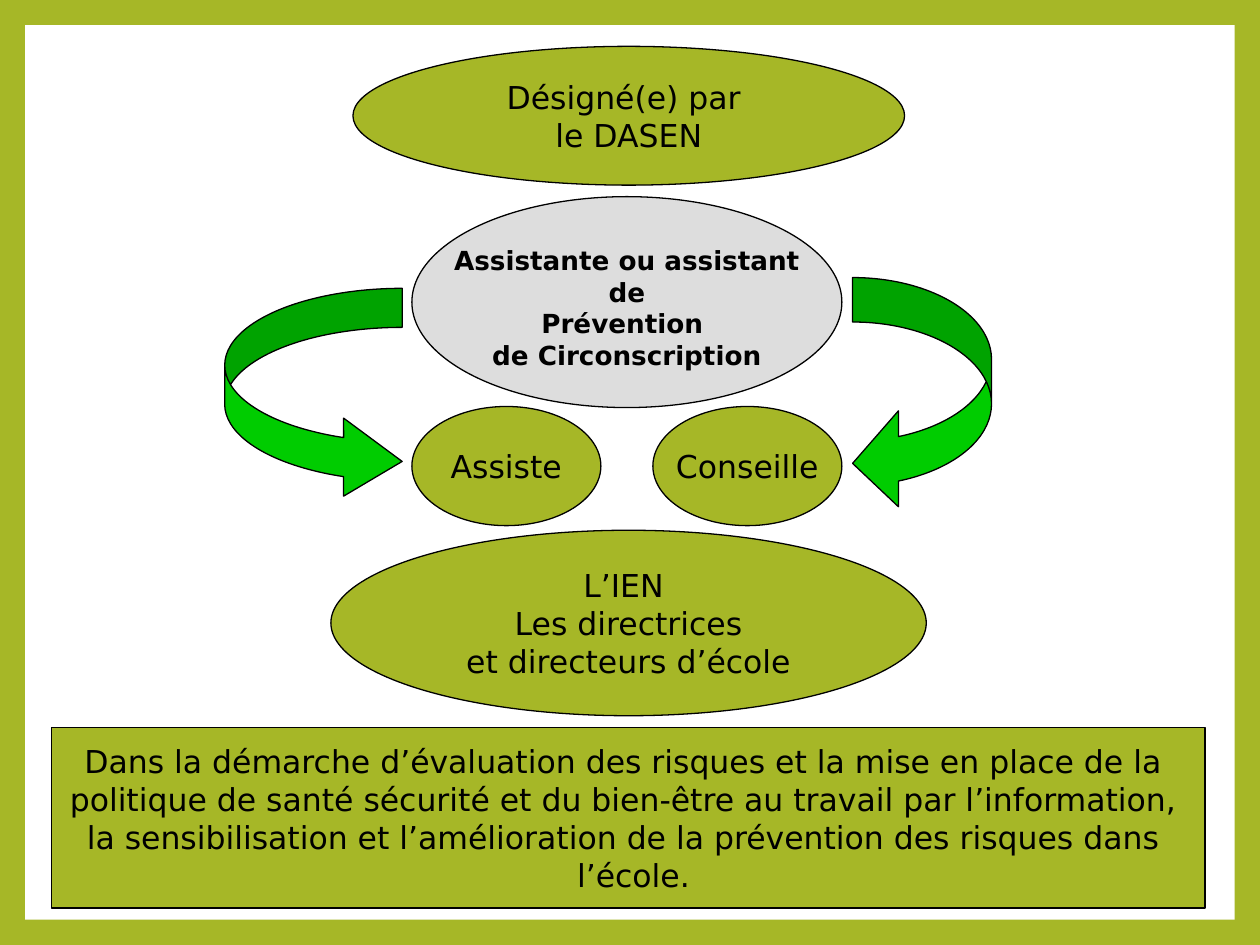
from dataclasses import dataclass

from pptx import Presentation
from pptx.dml.color import RGBColor
from pptx.enum.shapes import MSO_SHAPE as Preset
from pptx.enum.text import MSO_ANCHOR as Anchor, PP_ALIGN as Align
from pptx.shapes.autoshape import Shape
from pptx.slide import Slide
from pptx.util import Pt

OLIVE = RGBColor(0xA6, 0xB7, 0x27)
GREY = RGBColor(0xDD, 0xDD, 0xDD)
GREEN = RGBColor(0x00, 0xCC, 0x00)
WHITE = RGBColor(0xFF, 0xFF, 0xFF)
BLACK = RGBColor(0x00, 0x00, 0x00)
FONT = "DejaVu Sans"
SLIDE_WIDTH, SLIDE_HEIGHT, BORDER = 720, 540, 14.4


@dataclass(frozen=True)
class Box:
    left: float
    top: float
    width: float
    height: float


@dataclass(frozen=True)
class Label:
    box: Box
    text: str
    preset: Preset = Preset.OVAL
    fill: RGBColor = OLIVE
    size: float = 18
    bold: bool = False
    top_inset: float = 3.6


@dataclass(frozen=True)
class Arrow:
    box: Box
    preset: Preset
    adjustments: tuple[float, float, float]


ASSISTANT = Label(
    Box(235.4, 112.4, 245.7, 120.5),
    "Assistante ou assistant\vde\nPrévention \nde Circonscription",
    fill=GREY, size=15, bold=True, top_inset=9.6,
)
ARROWS = [
    Arrow(Box(128.4, 164.8, 101.4, 121.2), Preset.CURVED_RIGHT_ARROW, (0.22, 0.44, 0.33)),
    Arrow(Box(487.2, 158.6, 79.4, 133.6), Preset.CURVED_LEFT_ARROW, (0.32, 0.69, 0.33)),
]
LABELS = [
    Label(Box(235.4, 232.3, 108, 68.1), "Assiste"),
    Label(Box(373.1, 232.3, 108, 68.1), "Conseille"),
    Label(
        Box(29.6, 415.9, 659.1, 103),
        "Dans la démarche d’évaluation des risques et la mise en place de la \n"
        "politique de santé sécurité et du bien-être au travail par l’information, \n"
        "la sensibilisation et l’amélioration de la prévention des risques dans \n"
        " l’école.",
        preset=Preset.RECTANGLE,
    ),
    Label(Box(201.7, 26.5, 315.2, 79.3), "Désigné(e) par \nle DASEN"),
    Label(
        Box(189.1, 303, 340.2, 106),
        "L’IEN \nLes directrices\vet directeurs d’école",
    ),
]


def add_filled_shape(slide: Slide, preset: Preset, box: Box, color: RGBColor) -> Shape:
    shape = slide.shapes.add_shape(
        preset, Pt(box.left), Pt(box.top), Pt(box.width), Pt(box.height)
    )
    shape.shadow.inherit = False
    shape.fill.solid()
    shape.fill.fore_color.rgb = color
    shape.line.color.rgb = BLACK
    shape.line.width = Pt(0.75)
    return shape


def add_label(slide: Slide, label: Label) -> None:
    shape = add_filled_shape(slide, label.preset, label.box, label.fill)
    text_frame = shape.text_frame
    text_frame.text = label.text
    text_frame.word_wrap = False
    text_frame.vertical_anchor = Anchor.MIDDLE
    text_frame.margin_top = Pt(label.top_inset)
    for paragraph in text_frame.paragraphs:
        paragraph.alignment = Align.CENTER
        for run in paragraph.runs:
            run.font.name = FONT
            run.font.size = Pt(label.size)
            run.font.bold = label.bold
            run.font.color.rgb = BLACK


def add_arrow(slide: Slide, arrow: Arrow) -> None:
    shape = add_filled_shape(slide, arrow.preset, arrow.box, GREEN)
    for index, value in enumerate(arrow.adjustments):
        shape.adjustments[index] = value


def add_frame(slide: Slide) -> None:
    slide.background.fill.solid()
    slide.background.fill.fore_color.rgb = OLIVE
    inner = Box(BORDER, BORDER, SLIDE_WIDTH - 2 * BORDER, SLIDE_HEIGHT - 2 * BORDER)
    panel = add_filled_shape(slide, Preset.RECTANGLE, inner, WHITE)
    panel.line.fill.background()


def main() -> None:
    presentation = Presentation()
    presentation.slide_width = Pt(SLIDE_WIDTH)
    presentation.slide_height = Pt(SLIDE_HEIGHT)
    slide = presentation.slides.add_slide(presentation.slide_layouts[6])
    add_frame(slide)
    add_label(slide, ASSISTANT)
    for arrow in ARROWS:
        add_arrow(slide, arrow)
    for label in LABELS:
        add_label(slide, label)
    presentation.save("out.pptx")


if __name__ == "__main__":
    main()
